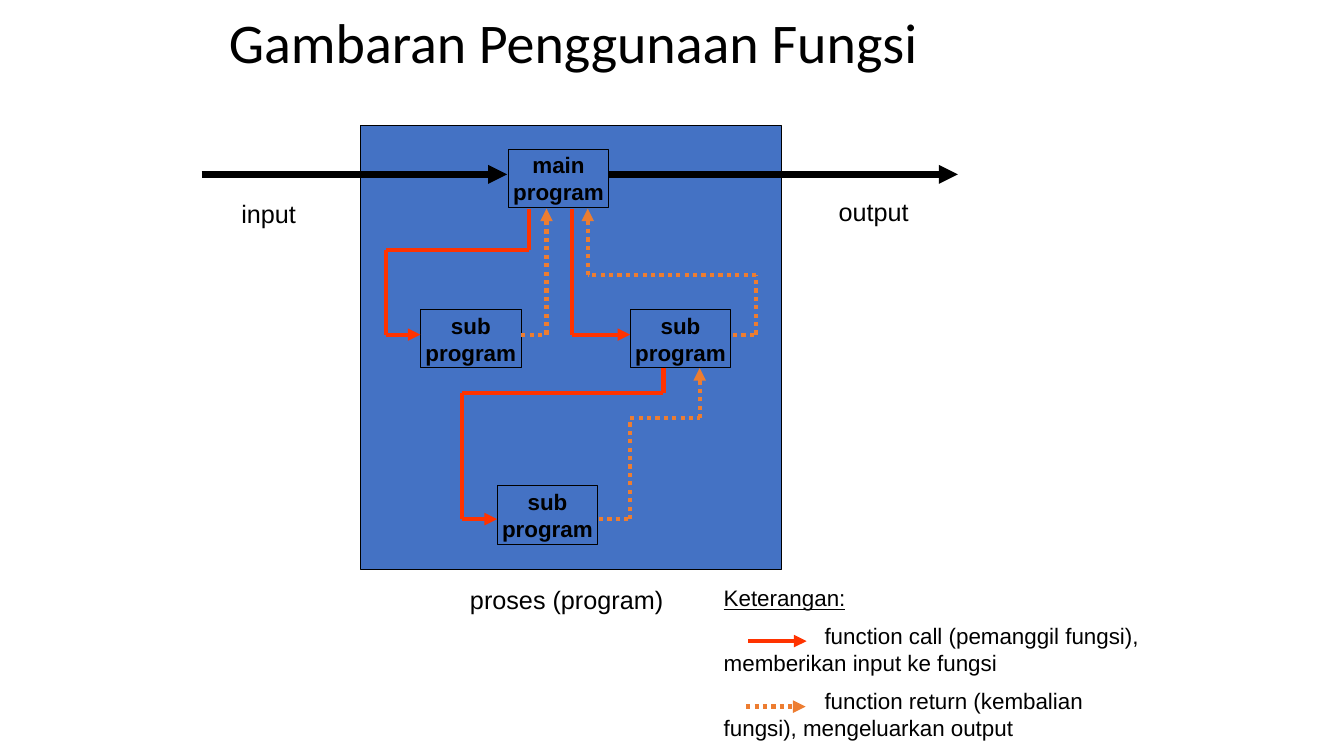
import pptx
import pptx.dml.color
import pptx.enum.dml
import pptx.enum.shapes
import pptx.enum.text
import pptx.oxml.ns
import pptx.util
from lxml import etree
from pptx.util import Inches

BLACK = pptx.dml.color.RGBColor(0x00, 0x00, 0x00)
BLUE = pptx.dml.color.RGBColor(0x44, 0x72, 0xC4)
RED = pptx.dml.color.RGBColor(0xFF, 0x33, 0x00)
ORANGE = pptx.dml.color.RGBColor(0xED, 0x7D, 0x31)

CENTER = pptx.enum.text.PP_ALIGN.CENTER
LEFT = pptx.enum.text.PP_ALIGN.LEFT
MIDDLE = pptx.enum.text.MSO_ANCHOR.MIDDLE
DOTTED = pptx.enum.dml.MSO_LINE.ROUND_DOT

BOX_WIDTH, BOX_HEIGHT = 1, 0.58

# Text, left, top
PROGRAM_BOXES = [
    ("main\nprogram", 5.04, 1.48),
    ("sub\nprogram", 6.25, 3.07),
    ("sub\nprogram", 4.93, 4.82),
    ("sub\nprogram", 4.17, 3.07),
]
# Text, left, top, width
LABELS = [
    ("input", 2, 1.92, 1.33),
    ("output", 7.83, 1.9, 1.67),
    ("proses (program)", 4.33, 5.75, 2.58),
]
CALL_ROUTES = [
    [(5.25, 2.07), (5.25, 2.48), (3.83, 2.48), (3.83, 3.32), (4.17, 3.32)],
    [(5.67, 2.07), (5.67, 3.32), (6.25, 3.32)],
    [(6.58, 3.65), (6.58, 3.9), (4.58, 3.9), (4.58, 5.15), (4.93, 5.15)],
    [(7.42, 6.36), (8, 6.36)],  # legend sample
]
RETURN_ROUTES = [
    [(5.17, 3.32), (5.42, 3.32), (5.42, 2.07)],
    [(5.94, 5.15), (6.25, 5.15), (6.25, 4.15), (6.94, 4.15), (6.94, 3.65)],
    [(7.27, 3.32), (7.5, 3.32), (7.5, 2.73), (5.83, 2.73), (5.83, 2.07)],
    [(7.4, 7.01), (7.99, 7.01)],  # legend sample
]
DATA_ROUTES = [
    [(2, 1.73), (5.03, 1.73)],
    [(6.04, 1.73), (9.5, 1.73)],
]
LEGEND = (
    "Keterangan:\n"
    "\tfunction call (pemanggil fungsi), \tmemberikan input ke fungsi\n"
    "\tfunction return (kembalian \tfungsi), mengeluarkan output"
)


def format_text(text_frame, size, font="Arial", bold=False, alignment=LEFT):
    for paragraph in text_frame.paragraphs:
        paragraph.alignment = alignment
        for run in paragraph.runs:
            run.font.name = font
            run.font.size = pptx.util.Pt(size)
            run.font.bold = bold
            run.font.color.rgb = BLACK


def set_title(slide, text):
    title = slide.shapes.title
    title.left, title.top = Inches(2.17), Inches(0.08)
    title.width, title.height = Inches(9), Inches(0.75)
    text_frame = title.text_frame
    text_frame.text = text
    text_frame.auto_size = pptx.enum.text.MSO_AUTO_SIZE.NONE
    text_frame.vertical_anchor = MIDDLE
    text_frame.paragraphs[0].line_spacing = 0.9
    format_text(text_frame, 40, "Calibri")


def add_text(slide, text, left, top, width, height, size, alignment=LEFT):
    box = slide.shapes.add_textbox(
        Inches(left), Inches(top), Inches(width), Inches(height))
    box.text_frame.word_wrap = True
    box.text_frame.text = text
    format_text(box.text_frame, size, alignment=alignment)
    return box.text_frame


def add_box(slide, left, top, width, height, text=""):
    shape = slide.shapes.add_shape(
        pptx.enum.shapes.MSO_SHAPE.RECTANGLE,
        Inches(left), Inches(top), Inches(width), Inches(height))
    shape.shadow.inherit = False
    shape.fill.solid()
    shape.fill.fore_color.rgb = BLUE
    shape.line.color.rgb = BLACK
    shape.line.width = pptx.util.Pt(0.75)
    if text:
        shape.text_frame.text = text
        shape.text_frame.word_wrap = False
        shape.text_frame.vertical_anchor = MIDDLE
        format_text(shape.text_frame, 16, bold=True, alignment=CENTER)


def add_line(slide, start, end, color, width, dash, arrow):
    connector = slide.shapes.add_connector(
        pptx.enum.shapes.MSO_CONNECTOR.STRAIGHT,
        *(Inches(value) for value in start + end))
    connector.line.color.rgb = color
    connector.line.width = pptx.util.Pt(width)
    if dash:
        connector.line.dash_style = dash
    if arrow:
        etree.SubElement(connector.line._get_or_add_ln(),
                         pptx.oxml.ns.qn("a:tailEnd"), type="triangle")
    etree.SubElement(connector._element.spPr,
                     pptx.oxml.ns.qn("a:effectLst"))


def add_route(slide, points, color, width=3, dash=None):
    """Join the points with straight lines; the last one has an arrowhead."""
    for index in range(1, len(points)):
        add_line(slide, points[index - 1], points[index], color, width, dash,
                 arrow=index == len(points) - 1)


def set_tab_stops(paragraph, positions):
    properties = paragraph._p.get_or_add_pPr()
    tab_list = etree.SubElement(properties, pptx.oxml.ns.qn("a:tabLst"))
    for position in positions:
        etree.SubElement(tab_list, pptx.oxml.ns.qn("a:tab"),
                         pos=str(Inches(position)), algn="l")


def add_legend(slide):
    text_frame = add_text(slide, LEGEND, 7.08, 5.75, 4.5, 1.7, 16)
    heading, *entries = text_frame.paragraphs
    heading.runs[0].font.underline = True
    for entry in entries:
        entry.space_before = pptx.util.Pt(8)
        # One stop per inch leaves room for the arrow samples
        set_tab_stops(entry, range(1, 6))


def main():
    presentation = pptx.Presentation()
    presentation.slide_width = Inches(13.33)
    presentation.slide_height = Inches(7.5)
    slide = presentation.slides.add_slide(presentation.slide_layouts[5])
    set_title(slide, "Gambaran Penggunaan Fungsi")

    # Labels around the process
    for text, left, top, width in LABELS:
        add_text(slide, text, left, top, width, 0.4, 18, CENTER)

    # Process panel and its programs
    add_box(slide, 3.58, 1.25, 4.17, 4.4)
    for text, left, top in PROGRAM_BOXES:
        add_box(slide, left, top, BOX_WIDTH, BOX_HEIGHT, text)

    # Legend text
    add_legend(slide)

    # Calls, returns and data flow
    for points in CALL_ROUTES:
        add_route(slide, points, RED)
    for points in RETURN_ROUTES:
        add_route(slide, points, ORANGE, dash=DOTTED)
    for points in DATA_ROUTES:
        add_route(slide, points, BLACK, width=4.5)

    presentation.save("out.pptx")


if __name__ == "__main__":
    main()
